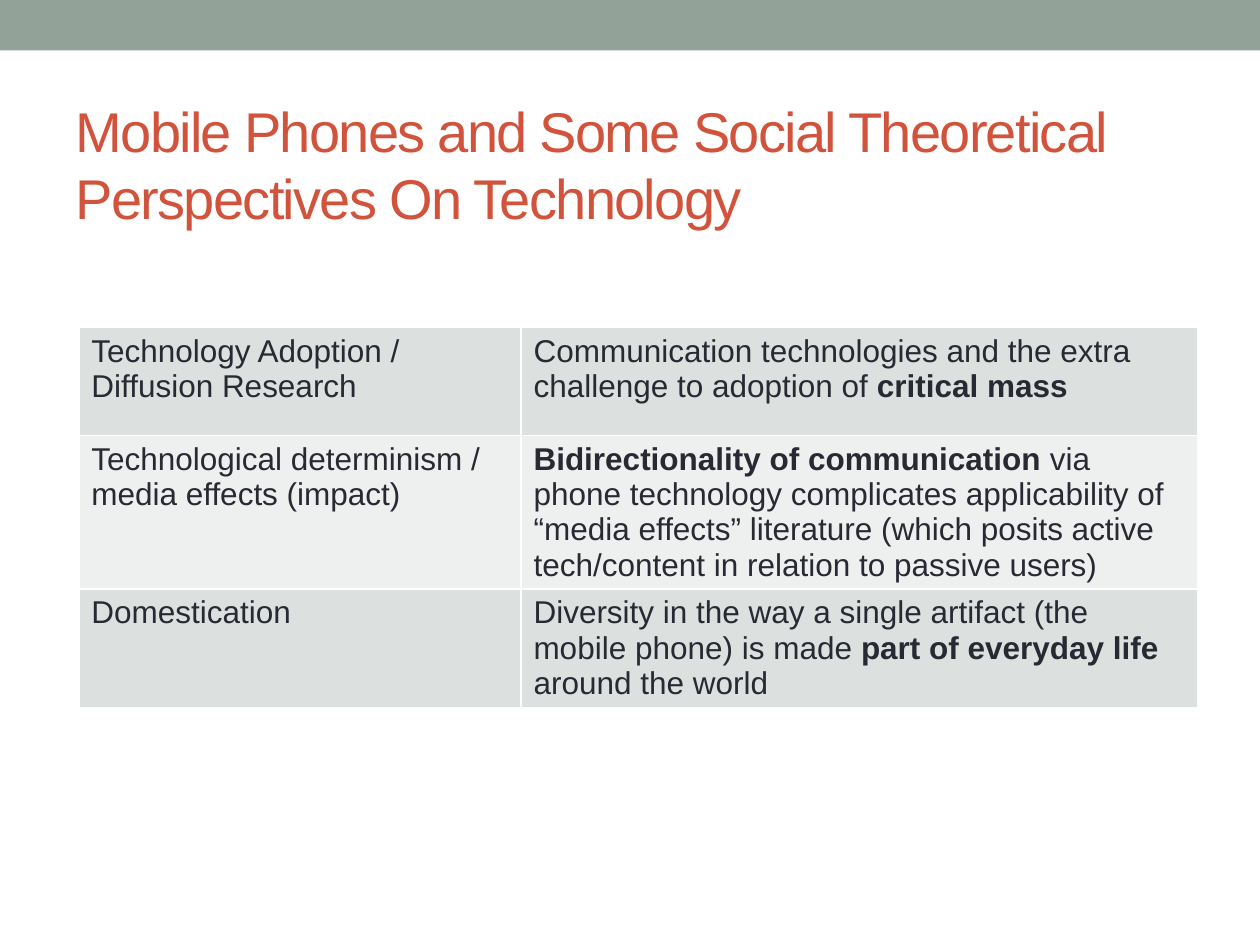
"""Build a slide with a titled table of theoretical perspectives on mobile phones."""
from dataclasses import dataclass

from lxml import etree
from pptx import Presentation
from pptx.dml.color import RGBColor
from pptx.enum.shapes import MSO_SHAPE
from pptx.enum.text import MSO_ANCHOR, PP_ALIGN
from pptx.oxml.ns import qn
from pptx.util import Pt

RECTANGLE = MSO_SHAPE.RECTANGLE
MIDDLE = MSO_ANCHOR.MIDDLE
LEFT = PP_ALIGN.LEFT

SAGE = RGBColor(0x93, 0xA2, 0x99)
BRICK = RGBColor(0xD2, 0x53, 0x3C)
INK = RGBColor(0x29, 0x29, 0x34)
BAND_DARK = RGBColor(0xDC, 0xE0, 0xDE)
BAND_LIGHT = RGBColor(0xEE, 0xF0, 0xEF)
WHITE = RGBColor(0xFF, 0xFF, 0xFF)
FONT = "Arial"
COLUMN_WIDTHS = (252.7, 386.6)


@dataclass(frozen=True)
class Phrase:
    text: str
    bold: bool = False


@dataclass(frozen=True)
class Perspective:
    name: str
    remark: tuple[Phrase, ...]
    height: float


PERSPECTIVES = (
    Perspective(
        "Technology Adoption / Diffusion Research",
        (
            Phrase("Communication technologies and the extra challenge to adoption of "),
            Phrase("critical mass", True),
        ),
        61.6,
    ),
    Perspective(
        "Technological determinism / media effects (impact)",
        (
            Phrase("Bidirectionality of communication ", True),
            Phrase(
                "via phone technology complicates applicability of “media effects” "
                "literature (which posits active tech/content in relation to passive users)"
            ),
        ),
        80,
    ),
    Perspective(
        "Domestication",
        (
            Phrase("Diversity in the way a single artifact (the mobile phone) is made "),
            Phrase("part of everyday life ", True),
            Phrase("around the world"),
        ),
        25.2,
    ),
)


def add_banner(slide, width: int) -> None:
    banner = slide.shapes.add_shape(RECTANGLE, 0, 0, width, Pt(28.8))
    banner.shadow.inherit = False
    banner.fill.solid()
    banner.fill.fore_color.rgb = SAGE
    banner.line.fill.background()


def set_title(title, text: str) -> None:
    title.left, title.top, title.width, title.height = Pt(36), Pt(54.7), Pt(648), Pt(77.8)
    frame = title.text_frame
    frame.text = text
    frame.word_wrap = True
    frame.vertical_anchor = MIDDLE
    heading = frame.paragraphs[0]
    heading.alignment = LEFT
    heading.font.name, heading.font.size = FONT, Pt(32)
    heading.font.color.rgb = BRICK
    heading.runs[0].font._element.set("spc", "-100")


def add_borders(cell) -> None:
    properties = cell._tc.get_or_add_tcPr()
    for position, side in enumerate(("a:lnL", "a:lnR", "a:lnT", "a:lnB")):
        border = etree.Element(qn(side), w=str(Pt(1)))
        fill = etree.SubElement(border, qn("a:solidFill"))
        etree.SubElement(fill, qn("a:srgbClr"), val=str(WHITE))
        properties.insert(position, border)


def fill_cell(cell, phrases: tuple[Phrase, ...], band: RGBColor) -> None:
    cell.fill.solid()
    cell.fill.fore_color.rgb = band
    add_borders(cell)
    paragraph = cell.text_frame.paragraphs[0]
    paragraph.font.name, paragraph.font.size = FONT, Pt(18)
    paragraph.font.color.rgb = INK
    for phrase in phrases:
        run = paragraph.add_run()
        run.text = phrase.text
        run.font.bold = phrase.bold


def add_perspectives(slide, perspectives: tuple[Perspective, ...]) -> None:
    height = sum(perspective.height for perspective in perspectives)
    table = slide.shapes.add_table(
        len(perspectives), len(COLUMN_WIDTHS),
        Pt(45), Pt(187.2), Pt(sum(COLUMN_WIDTHS)), Pt(height),
    ).table
    table.first_row = False
    for column, width in zip(table.columns, COLUMN_WIDTHS):
        column.width = Pt(width)
    for index, perspective in enumerate(perspectives):
        band = BAND_LIGHT if index % 2 else BAND_DARK
        table.rows[index].height = Pt(perspective.height)
        fill_cell(table.cell(index, 0), (Phrase(perspective.name),), band)
        fill_cell(table.cell(index, 1), perspective.remark, band)


def main() -> None:
    presentation = Presentation()
    presentation.slide_width, presentation.slide_height = Pt(720), Pt(540)
    slide = presentation.slides.add_slide(presentation.slide_layouts[5])
    add_banner(slide, presentation.slide_width)
    set_title(slide.shapes.title, "Mobile Phones and Some Social Theoretical Perspectives On Technology")
    add_perspectives(slide, PERSPECTIVES)
    presentation.save("out.pptx")


if __name__ == "__main__":
    main()
